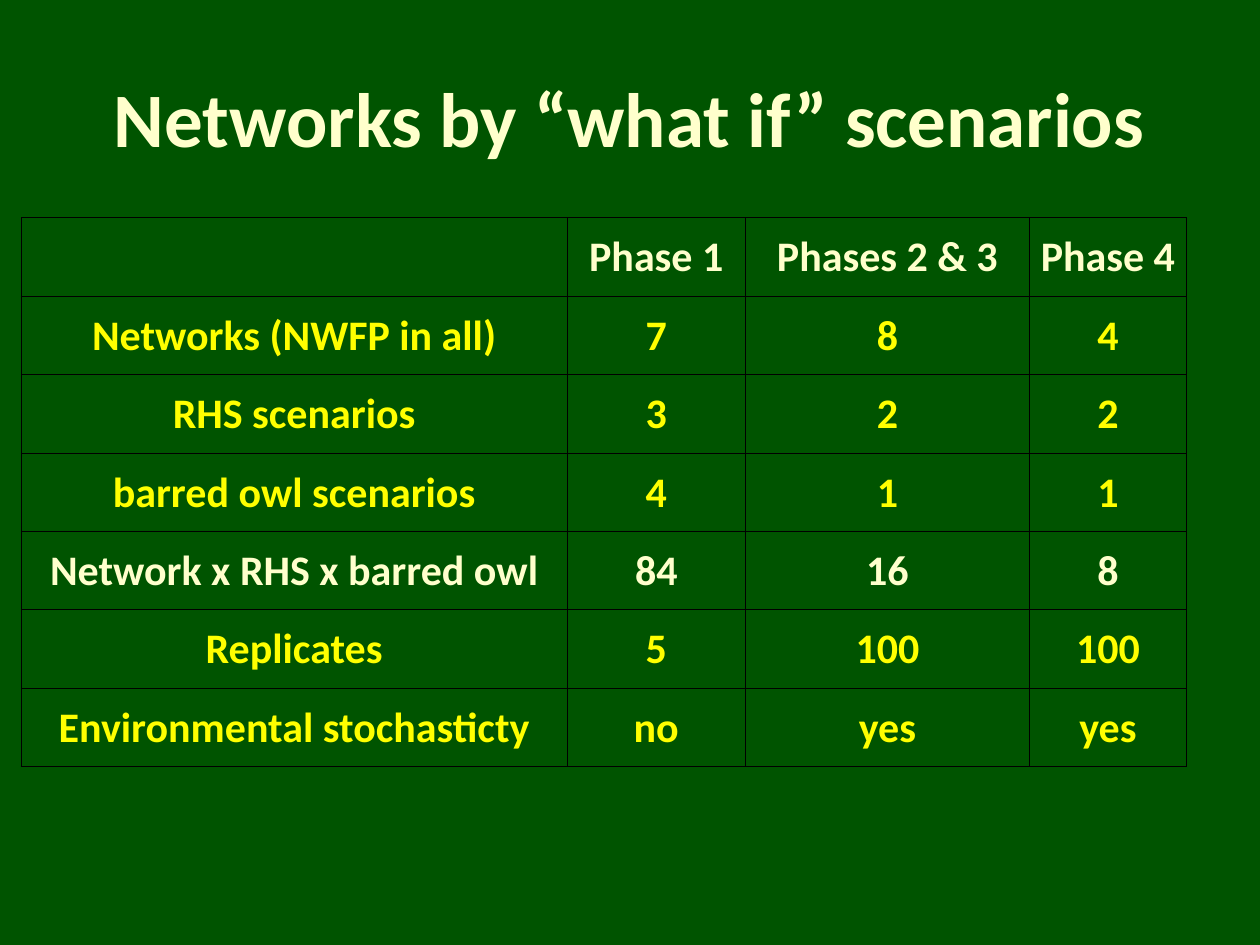
from dataclasses import dataclass

from lxml import etree
from pptx import Presentation
from pptx.dml.color import RGBColor
from pptx.enum.text import MSO_ANCHOR, PP_ALIGN
from pptx.oxml.ns import qn
from pptx.util import Cm, Pt

MIDDLE = MSO_ANCHOR.MIDDLE
CENTER = PP_ALIGN.CENTER
BLANK_LAYOUT = 6


@dataclass(frozen=True)
class Theme:
    font: str = "Calibri"
    background: str = "005400"
    cream: str = "FFFFCC"
    yellow: str = "FFFF00"
    border: str = "000000"
    border_width: float = 0.5
    title_size: int = 44
    table_size: int = 24


HEADER = ("", "Phase 1", "Phases 2 & 3", "Phase 4")
PRODUCT_ROW = ("Network x RHS x barred owl", "84", "16", "8")
ROWS = (
    HEADER,
    ("Networks (NWFP in all)", "7", "8", "4"),
    ("RHS scenarios", "3", "2", "2"),
    ("barred owl scenarios", "4", "1", "1"),
    PRODUCT_ROW,
    ("Replicates", "5", "100", "100"),
    ("Environmental stochasticty", "no", "yes", "yes"),
)
CREAM_ROWS = (HEADER, PRODUCT_ROW)
COLUMN_WIDTHS = (11, 3.6, 5.72, 3.17)
ROW_HEIGHT = 1.58


class SlideBuilder:
    def __init__(self, slide, theme):
        self.slide = slide
        self.theme = theme

    def background(self):
        fill = self.slide.background.fill
        fill.solid()
        fill.fore_color.rgb = RGBColor.from_string(self.theme.background)

    def set_text(self, frame, text, size, color):
        """Put one centred bold paragraph into a text frame."""
        para = frame.paragraphs[0]
        para.text = text
        para.alignment = CENTER
        para.font.name = self.theme.font
        para.font.size = Pt(size)
        para.font.bold = True
        para.font.color.rgb = RGBColor.from_string(color)

    def title(self, text, left, top, width, height):
        box = self.slide.shapes.add_textbox(Cm(left), Cm(top), Cm(width), Cm(height))
        frame = box.text_frame
        frame.word_wrap = True
        frame.vertical_anchor = MIDDLE
        self.set_text(frame, text, self.theme.title_size, self.theme.cream)

    def table(self, rows, cream_rows, left, top, widths, row_height):
        table = self.slide.shapes.add_table(
            len(rows), len(widths), Cm(left), Cm(top),
            Cm(sum(widths)), Cm(row_height * len(rows)),
        ).table
        table.first_row = False
        table.horz_banding = False
        for column, width in zip(table.columns, widths):
            column.width = Cm(width)
        for table_row, texts in zip(table.rows, rows):
            table_row.height = Cm(row_height)
            color = self.theme.cream if texts in cream_rows else self.theme.yellow
            for cell, text in zip(table_row.cells, texts):
                self.style_cell(cell)
                self.set_text(cell.text_frame, text, self.theme.table_size, color)

    def style_cell(self, cell):
        cell.vertical_anchor = MIDDLE
        cell.margin_left = cell.margin_right = cell.margin_top = Cm(0.03)
        cell.margin_bottom = Cm(0)
        properties = cell._tc.get_or_add_tcPr()
        for side in ("a:lnL", "a:lnR", "a:lnT", "a:lnB"):
            line = etree.SubElement(
                properties, qn(side), w=str(Pt(self.theme.border_width))
            )
            fill = etree.SubElement(line, qn("a:solidFill"))
            etree.SubElement(fill, qn("a:srgbClr"), val=self.theme.border)
        cell.fill.background()


def main():
    deck = Presentation()
    deck.slide_width = Cm(25.4)
    deck.slide_height = Cm(19.05)
    page = deck.slides.add_slide(deck.slide_layouts[BLANK_LAYOUT])

    builder = SlideBuilder(page, Theme())
    builder.background()
    builder.title("Networks by “what if” scenarios", 1.27, 0.76, 22.86, 3.18)
    builder.table(ROWS, CREAM_ROWS, 0.43, 4.39, COLUMN_WIDTHS, ROW_HEIGHT)

    deck.save("out.pptx")


if __name__ == "__main__":
    main()
